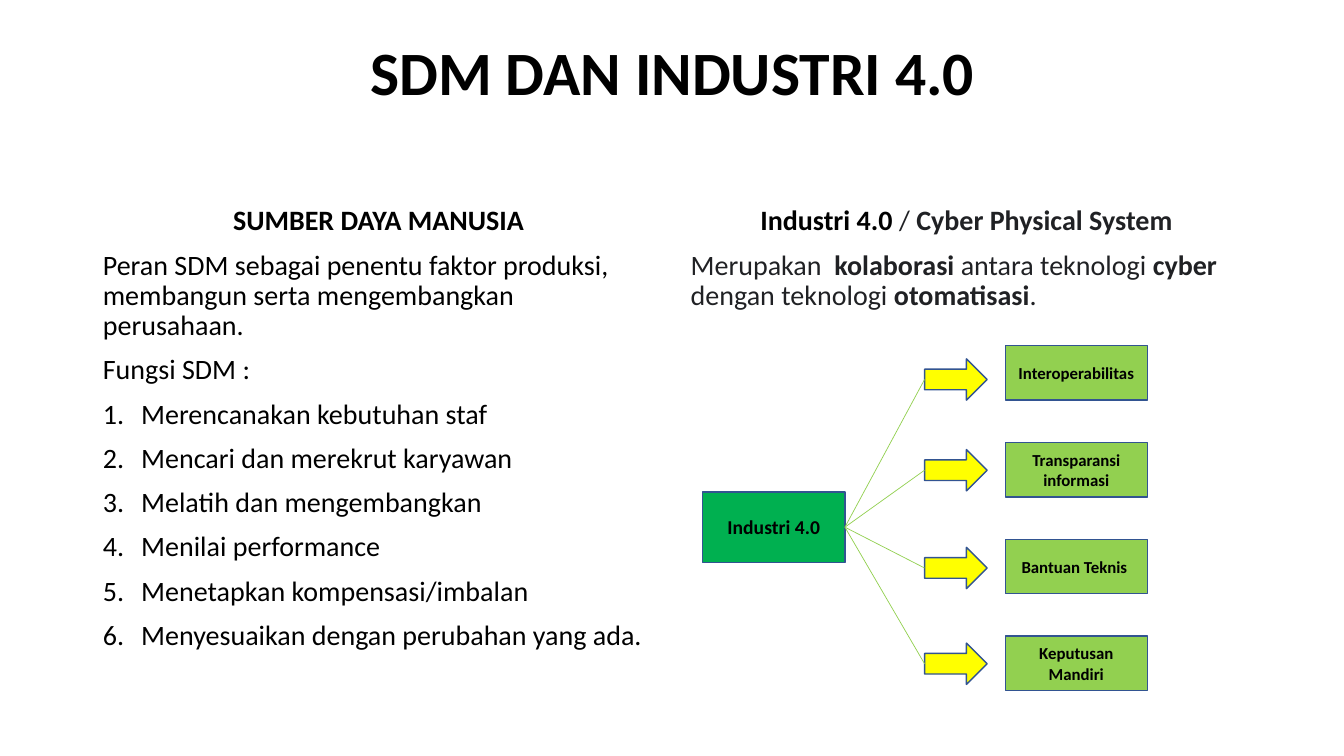
from lxml import etree
from pptx import Presentation
from pptx import util as u
from pptx.dml.color import RGBColor
from pptx.enum import shapes, text
from pptx.oxml.ns import qn

BLACK, CHARCOAL, OUTLINE = "000000", "202124", "325491"
GREEN, LIME, YELLOW = "00B050", "92D050", "FFFF00"
LEFT, CENTER, JUSTIFY = text.PP_ALIGN.LEFT, text.PP_ALIGN.CENTER, text.PP_ALIGN.JUSTIFY


def rgb(value):
    return RGBColor.from_string(value)


class SlideBuilder:
    font_name = "Calibri"

    def __init__(self, slide):
        self.slide = slide

    def style(self, font, size, color=BLACK, bold=None):
        font.name, font.size, font.bold = self.font_name, u.Pt(size), bold
        font.color.rgb = rgb(color)

    def placeholder(self, index, left, top, width, height):
        """Move a placeholder and return its top-anchored text frame."""
        shape = self.slide.placeholders[index]
        shape.left, shape.top = u.Inches(left), u.Inches(top)
        shape.width, shape.height = u.Inches(width), u.Inches(height)
        frame = shape.text_frame
        frame.auto_size = text.MSO_AUTO_SIZE.NONE
        frame.vertical_anchor = text.MSO_ANCHOR.TOP
        return frame

    def title(self, words, *box):
        paragraph = self.placeholder(0, *box).paragraphs[0]
        paragraph.text = words
        paragraph.alignment, paragraph.line_spacing = CENTER, 0.9
        self.style(paragraph.font, 44, bold=True)

    def paragraph(self, frame, words, align=LEFT, numbered=False, color=BLACK):
        """Add a body paragraph; words between asterisks are bold."""
        first = not frame.text
        paragraph = frame.paragraphs[0] if first else frame.add_paragraph()
        for number, part in enumerate(words.split("*")):
            if part:
                run = paragraph.add_run()
                run.text, run.font.bold = part, number % 2 == 1
        properties = paragraph._p.get_or_add_pPr()
        indent = u.Inches(0.38) if numbered else 0
        properties.set("marL", str(indent))
        properties.set("indent", str(-indent))
        if numbered:
            etree.SubElement(properties, qn("a:buAutoNum"), type="arabicPeriod")
        else:
            etree.SubElement(properties, qn("a:buNone"))
        paragraph.alignment, paragraph.line_spacing = align, 0.9
        paragraph.space_before = u.Pt(0 if first else 10)
        self.style(paragraph.font, 20, color)
        return paragraph

    def shape(self, kind, left, top, width, height, fill, label="", size=12):
        shape = self.slide.shapes.add_shape(
            kind, u.Inches(left), u.Inches(top), u.Inches(width), u.Inches(height))
        shape.shadow.inherit = False
        shape.fill.solid()
        shape.fill.fore_color.rgb = rgb(fill)
        shape.line.color.rgb = rgb(OUTLINE)
        shape.line.width = u.Pt(1)
        if label:
            paragraph = shape.text_frame.paragraphs[0]
            paragraph.text, paragraph.alignment = label, CENTER
            self.style(paragraph.font, size, bold=True)
        return shape

    def connect(self, start, end):
        """Join the right side of start to the left side of end."""
        line = self.slide.shapes.add_connector(shapes.MSO_CONNECTOR.STRAIGHT, 0, 0, 0, 0)
        line.begin_connect(start, 3)
        line.end_connect(end, 1)
        line.line.color.rgb = rgb(LIME)
        line.line.width = u.Pt(0.5)
        etree.SubElement(line._element.spPr, qn("a:effectLst"))


def main():
    presentation = Presentation()
    presentation.slide_width, presentation.slide_height = u.Inches(13.33), u.Inches(7.5)
    builder = SlideBuilder(presentation.slides.add_slide(presentation.slide_layouts[3]))
    builder.title("SDM DAN INDUSTRI 4.0", 0.92, 0.37, 11.5, 1.45)

    resources = builder.placeholder(1, 0.92, 2, 5.67, 4.76)
    builder.paragraph(resources, "*SUMBER DAYA MANUSIA*", CENTER)
    builder.paragraph(resources, "Peran SDM sebagai penentu faktor produksi, "
                                 "membangun serta mengembangkan perusahaan.")
    builder.paragraph(resources, "Fungsi SDM :", JUSTIFY)
    for task in ("Merencanakan kebutuhan staf", "Mencari dan merekrut karyawan",
                 "Melatih dan mengembangkan", "Menilai performance",
                 "Menetapkan kompensasi/imbalan",
                 "Menyesuaikan dengan perubahan yang ada."):
        builder.paragraph(resources, task, JUSTIFY, numbered=True)

    industry = builder.placeholder(2, 6.75, 2, 5.67, 5.13)
    heading = builder.paragraph(industry, "*Industri 4.0 */ *Cyber Physical System*",
                                CENTER, color=CHARCOAL)
    heading.runs[0].font.color.rgb = rgb(BLACK)
    builder.paragraph(industry, "Merupakan  *kolaborasi *antara teknologi *cyber *"
                                "dengan teknologi *otomatisasi*.", color=CHARCOAL)

    rectangle, arrow_kind = shapes.MSO_SHAPE.RECTANGLE, shapes.MSO_SHAPE.RIGHT_ARROW
    source = builder.shape(rectangle, 6.97, 4.88, 1.41, 0.7, GREEN, "Industri 4.0", 14)
    principles = (("Interoperabilitas", 3.56), ("Transparansi informasi", 4.46),
                  ("Bantuan Teknis ", 5.43), ("Keputusan Mandiri", 6.38))
    for row, (principle, arrow_top) in enumerate(principles):
        builder.shape(rectangle, 9.97, 3.43 + 0.96 * row, 1.41, 0.54, LIME, principle)
        arrow = builder.shape(arrow_kind, 9.17, arrow_top, 0.62, 0.41, YELLOW)
        builder.connect(source, arrow)

    for placeholder in list(builder.slide.placeholders):
        if not placeholder.text_frame.text:
            placeholder._element.getparent().remove(placeholder._element)
    presentation.save("out.pptx")


if __name__ == "__main__":
    main()
